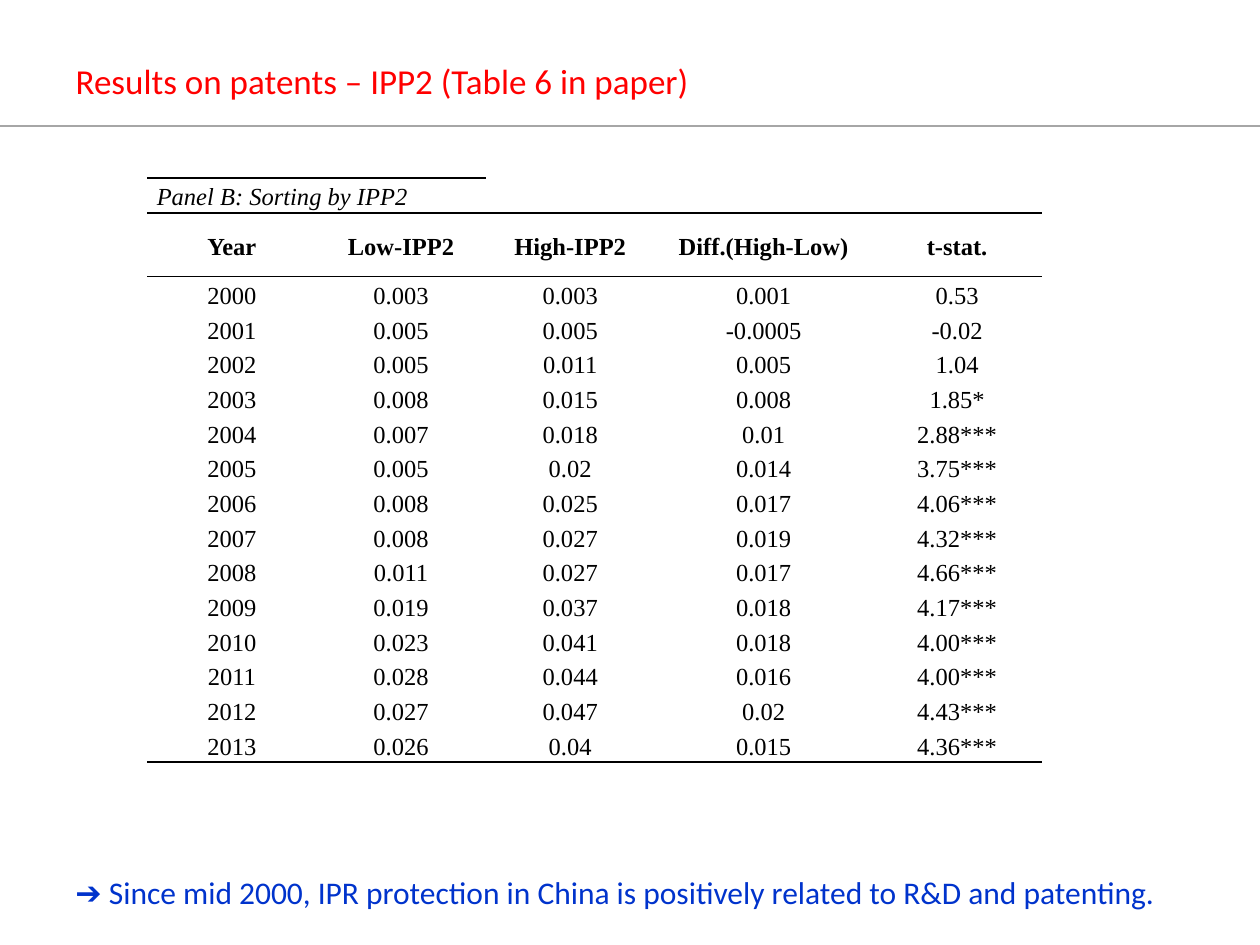
from lxml.etree import SubElement
from pptx import Presentation
from pptx.dml.color import RGBColor
from pptx.enum.shapes import MSO_CONNECTOR as Connector
from pptx.enum.text import MSO_ANCHOR as Anchor, MSO_AUTO_SIZE as AutoSize, PP_ALIGN as Align
from pptx.oxml.ns import qn
from pptx.util import Cm, Pt

PANEL = "Panel B: Sorting by IPP2"
HEADERS = ["Year", "Low-IPP2", "High-IPP2", "Diff.(High-Low)", "t-stat."]
RESULTS = [
    ["2000", "0.003", "0.003", "0.001", "0.53"],
    ["2001", "0.005", "0.005", "-0.0005", "-0.02"],
    ["2002", "0.005", "0.011", "0.005", "1.04"],
    ["2003", "0.008", "0.015", "0.008", "1.85*"],
    ["2004", "0.007", "0.018", "0.01", "2.88***"],
    ["2005", "0.005", "0.02", "0.014", "3.75***"],
    ["2006", "0.008", "0.025", "0.017", "4.06***"],
    ["2007", "0.008", "0.027", "0.019", "4.32***"],
    ["2008", "0.011", "0.027", "0.017", "4.66***"],
    ["2009", "0.019", "0.037", "0.018", "4.17***"],
    ["2010", "0.023", "0.041", "0.018", "4.00***"],
    ["2011", "0.028", "0.044", "0.016", "4.00***"],
    ["2012", "0.027", "0.047", "0.02", "4.43***"],
    ["2013", "0.026", "0.04", "0.015", "4.36***"],
]
COLUMN_WIDTHS = [3.41, 3.41, 3.41, 4.39, 3.41]
ROW_HEIGHT, HEADER_HEIGHT = 0.7, 1.29


def color(value):
    """Turn a hex string into a colour."""
    return RGBColor.from_string(value)


def write(frame, text, size=14, font="Times New Roman", fill="000000",
          bold=False, italic=False, align=Align.LEFT, spacing=None):
    """Write one formatted paragraph into a text frame."""
    paragraph = frame.paragraphs[0]
    paragraph.alignment = align
    paragraph.line_spacing = spacing
    if not text:
        SubElement(paragraph._p, qn("a:endParaRPr"), sz=str(size * 100))
        return
    run = paragraph.add_run()
    run.text = text
    run.font.size, run.font.name = Pt(size), font
    run.font.bold, run.font.italic = bold, italic
    run.font.color.rgb = color(fill)


def format_line_of_text(shape, left, top, width, height, text, **style):
    """Place a shape and fill it with one unwrapped line."""
    shape.left, shape.top, shape.width, shape.height = map(Cm, (left, top, width, height))
    frame = shape.text_frame
    frame.word_wrap = False
    frame.auto_size = AutoSize.SHAPE_TO_FIT_TEXT
    frame.vertical_anchor = Anchor.TOP
    write(frame, text, font="Calibri", **style)


def add_rule(slide, top, width):
    """Draw the grey line below the title."""
    line = slide.shapes.add_connector(Connector.STRAIGHT, 0, Cm(top), width, Cm(top))
    line.line.color.rgb = color("A6A6A6")
    line.line.width = Pt(1)
    SubElement(line._element.spPr, qn("a:effectLst"))


def set_borders(cell, visible):
    """Draw the named cell sides in black and clear the others."""
    properties = cell._tc.get_or_add_tcPr()
    for side in "LRTB":
        line = SubElement(properties, qn(f"a:ln{side}"), w=str(Pt(1)))
        if side in visible:
            fill = SubElement(line, qn("a:solidFill"))
            SubElement(fill, qn("a:srgbClr"), val="000000")
        else:
            SubElement(line, qn("a:noFill"))


def ruled_sides(row, column, last_row):
    """Tell which sides of a cell carry a rule."""
    top = row in (1, 2) or (row == 0 and column < 2)
    return "T" * top + "B" * (row in (0, 1, last_row))


def add_results_table(slide, left, top):
    """Add the table of sorted patent results."""
    rows = [[PANEL, "", "", "", ""], HEADERS, *RESULTS]
    heights = [ROW_HEIGHT, HEADER_HEIGHT] + [ROW_HEIGHT] * len(RESULTS)
    table = slide.shapes.add_table(len(rows), len(HEADERS), Cm(left), Cm(top),
                                   Cm(sum(COLUMN_WIDTHS)), Cm(sum(heights))).table
    table.first_row = table.horz_banding = False
    for column, width in zip(table.columns, COLUMN_WIDTHS):
        column.width = Cm(width)
    for row_index, (values, height) in enumerate(zip(rows, heights)):
        table.rows[row_index].height = Cm(height)
        for column_index, value in enumerate(values):
            cell = table.cell(row_index, column_index)
            cell.margin_left = cell.margin_right = Cm(0.19)
            cell.margin_top = cell.margin_bottom = 0
            cell.vertical_anchor = Anchor.MIDDLE
            set_borders(cell, ruled_sides(row_index, column_index, len(rows) - 1))
            cell.fill.background()
            write(cell.text_frame, value, bold=row_index == 1, italic=row_index == 0,
                  align=Align.CENTER if row_index else Align.LEFT, spacing=1.15)
    table.cell(0, 0).merge(table.cell(0, 1))


def main():
    """Build and save the slide."""
    presentation = Presentation()
    presentation.slide_width, presentation.slide_height = Cm(25.4), Cm(19.05)
    slide = presentation.slides.add_slide(presentation.slide_layouts[5])
    add_rule(slide, 2.54, presentation.slide_width)
    format_line_of_text(slide.shapes.title, 1.27, 1.07, 13, 1.11,
                        "Results on patents – IPP2 (Table 6 in paper)", size=20, fill="FF0000")
    conclusion = slide.shapes.add_textbox(0, 0, 0, 0)
    format_line_of_text(conclusion, 1.27, 17.48, 22.83, 1.03,
                        "➔ Since mid 2000, IPR protection in China is positively related "
                        "to R&D and patenting.", size=18, fill="0033CC")
    add_results_table(slide, 2.97, 3.59)
    presentation.save("out.pptx")


if __name__ == "__main__":
    main()
